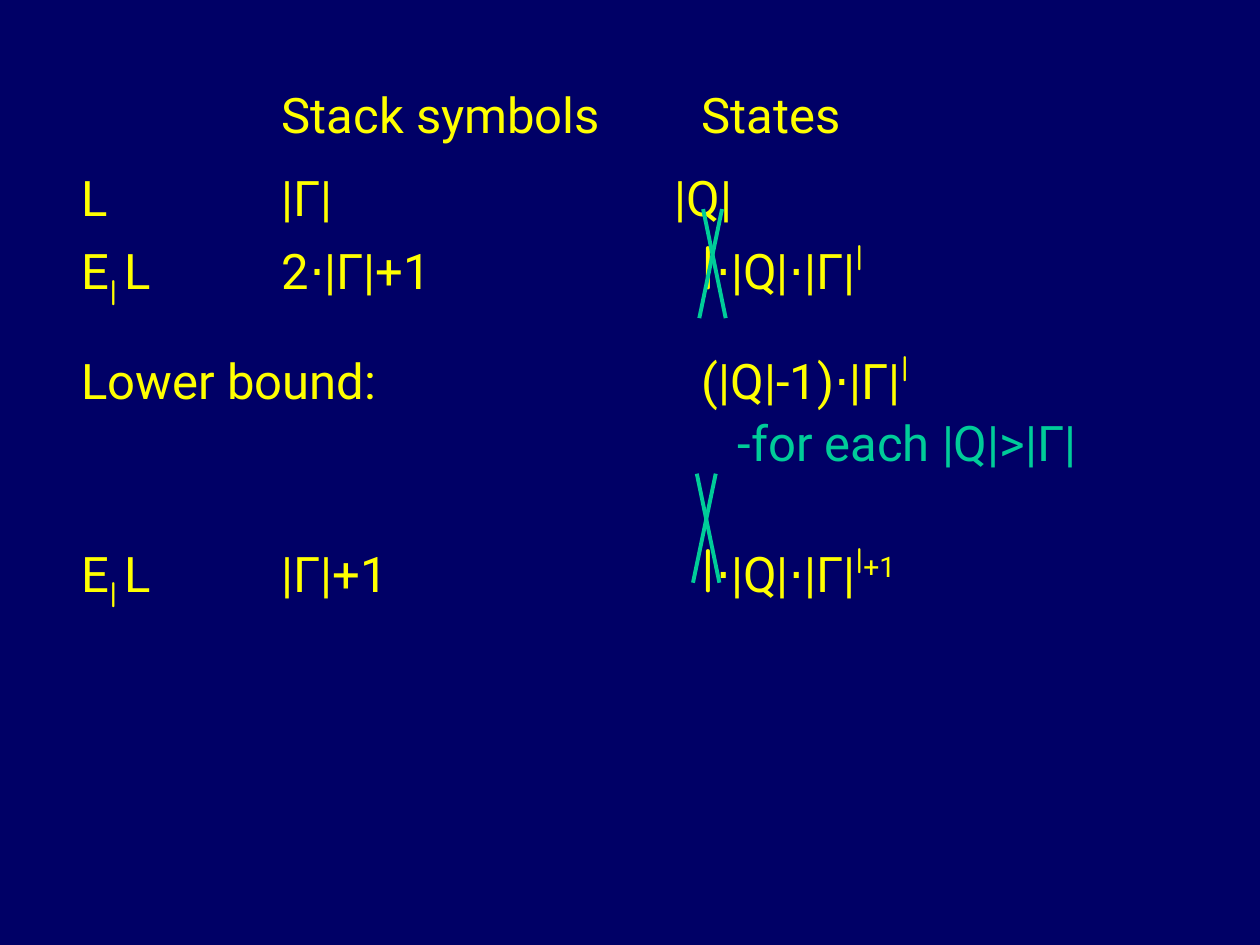
from lxml.etree import SubElement
from pptx import Presentation
from pptx.dml.color import RGBColor
from pptx.enum.shapes import MSO_CONNECTOR
from pptx.oxml.ns import qn
from pptx.util import Pt

YELLOW, GREEN, NAVY = "FFFF00", "00CC99", "000066"
LABEL, STACK, STATES = 20, 134.5, 374.5  # tab stops of the three columns


def paint(color, value):
    color.rgb = RGBColor.from_string(value)


class Board:
    font, size = "Roboto", 28
    ell_font, ell_size = "Comic Neue", 36

    def __init__(self, deck):
        self.slide = deck.slides.add_slide(deck.slide_layouts[6])
        fill = self.slide.background.fill
        fill.solid()
        paint(fill.fore_color, NAVY)

    def text(self, left, top, width, height):
        frame = self.slide.shapes.add_textbox(
            Pt(left), Pt(top), Pt(width), Pt(height)).text_frame
        frame.word_wrap = True
        frame.margin_top = Pt(5)
        return frame

    def row(self, par, stops, parts, gap=0, color=YELLOW):
        """Fill a paragraph; each part is text or (text, baseline percent)."""
        par.space_before = Pt(gap)
        tabs = SubElement(par._p.get_or_add_pPr(), qn("a:tabLst"))
        for stop in stops:
            SubElement(tabs, qn("a:tab"), pos=str(int(Pt(stop))), algn="l")
        par.font.name, par.font.size = self.font, Pt(self.size)
        paint(par.font.color, color)
        for part in parts:
            words, shift = part if isinstance(part, tuple) else (part, 0)
            run = par.add_run()
            run.text = words
            if words == "l":
                run.font.name, run.font.size = self.ell_font, Pt(self.ell_size)
            if shift:
                run.font._element.set("baseline", str(shift * 1000))

    def cross(self, left, top, height=62.3):
        group = self.slide.shapes.add_group_shape()
        for start, end in ((13, 0), (2.2, 15.1)):
            line = group.shapes.add_connector(
                MSO_CONNECTOR.STRAIGHT, Pt(left + start), Pt(top),
                Pt(left + end), Pt(top + height))
            line.line.width = Pt(2.25)
            paint(line.line.color, GREEN)
            SubElement(line._element.spPr, qn("a:effectLst"))


def main():
    deck = Presentation()
    deck.slide_width, deck.slide_height = Pt(720), Pt(540)
    board = Board(deck)
    columns = (LABEL, STACK, STATES)
    sub, sup = ("l", -25), ("l", 30)
    name = ["\tE", sub, (" ", -25)]
    rows = [
        dict(stops=(STACK, STATES), parts=["\tStack symbols\tStates"]),
        dict(stops=(LABEL, STACK, 359), parts=["\tL\t|Γ|\t|Q|"], gap=14),
        dict(stops=columns,
             parts=name + ["L\t2⋅|Γ|+1\t", "l", "⋅|Q|⋅|Γ|", sup]),
        dict(stops=(LABEL, STATES),
             parts=["\tLower bound:\t(|Q|-1)⋅|Γ|", sup], gap=14),
        dict(stops=(395,), parts=["\t-for each |Q|>|Γ|"], color=GREEN),
        dict(stops=columns, gap=33,
             parts=name + ["L\t|Γ|+1\t", "l", "⋅|Q|⋅|Γ|", sup, ("+1", 30)]),
    ]
    frame = board.text(19.44, 43.2, 680.4, 293)
    for index, row in enumerate(rows):
        par = frame.add_paragraph() if index else frame.paragraphs[0]
        board.row(par, **row)
    board.cross(399.6, 119.5)
    board.cross(396, 270.7)
    deck.save("out.pptx")


if __name__ == "__main__":
    main()
